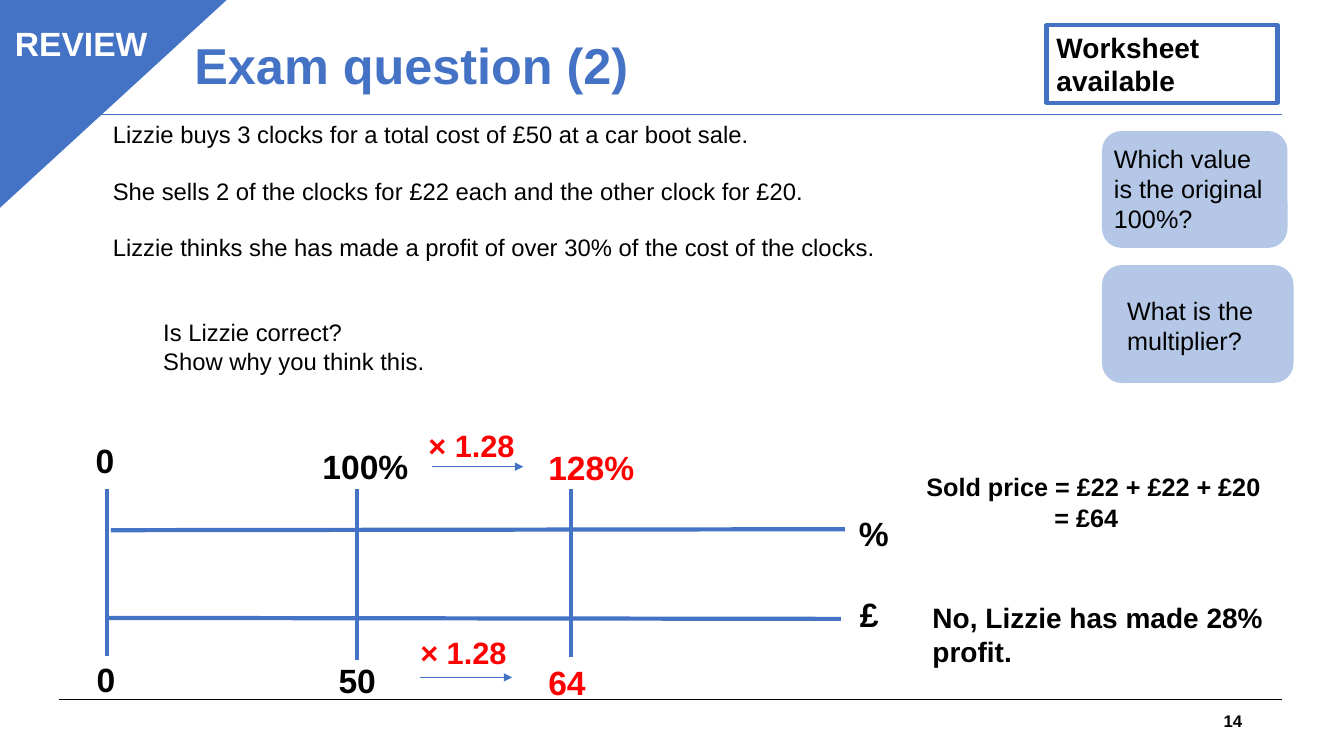
import pptx
import pptx.dml.color
import pptx.enum.shapes
import pptx.enum.text
import pptx.oxml
import pptx.oxml.ns
import pptx.util

EMU_PER_PX = 9144
BLUE, PALE, BLACK, RED, WHITE = "4472C4", "B4C7E7", "000000", "FF0000", "FFFFFF"
SHAPES = pptx.enum.shapes.MSO_SHAPE
ALIGN = pptx.enum.text.PP_ALIGN
ANCHOR = pptx.enum.text.MSO_ANCHOR


def px(length):
    return pptx.util.Emu(length * EMU_PER_PX)


def rgb(value):
    return pptx.dml.color.RGBColor.from_string(value)


def apply(target, values):
    for name, value in values.items():
        setattr(target, name, value)


def append_xml(parent, tag, **attributes):
    element = pptx.oxml.parse_xml(f"<a:{tag} {pptx.oxml.ns.nsdecls('a')}/>")
    for name, value in attributes.items():
        element.set(name, value)
    parent.append(element)


class Board:
    """Draws text, shapes and lines on one slide in a shared style."""

    font = "Arial"

    def __init__(self, slide):
        self.shapes = slide.shapes

    def fill_frame(self, frame, paragraphs, size, color=BLACK, bold=True,
                   align=ALIGN.LEFT, anchor=ANCHOR.TOP, spacing=None):
        apply(frame, {"word_wrap": True, "vertical_anchor": anchor})
        for index, (words, before, indent) in enumerate(paragraphs):
            paragraph = frame.paragraphs[0] if index == 0 else frame.add_paragraph()
            paragraph.text = words
            apply(paragraph, {"alignment": align, "line_spacing": spacing,
                              "space_before": pptx.util.Pt(before)})
            if indent:
                paragraph._p.get_or_add_pPr().set("marL", str(px(indent)))
            apply(paragraph.font, {"name": self.font, "bold": bold,
                                   "size": pptx.util.Pt(size)})
            paragraph.font.color.rgb = rgb(color)

    def text(self, box, words, size, **style):
        paragraphs = [(words, 0, 0)] if isinstance(words, str) else words
        frame = self.shapes.add_textbox(*map(px, box)).text_frame
        self.fill_frame(frame, paragraphs, size, **style)

    def shape(self, kind, box, fill=None, line=None, width=1):
        shape = self.shapes.add_shape(kind, *map(px, box))
        shape.shadow.inherit = False
        if fill:
            shape.fill.solid()
            shape.fill.fore_color.rgb = rgb(fill)
        else:
            shape.fill.background()
        if line:
            shape.line.color.rgb = rgb(line)
            shape.line.width = pptx.util.Pt(width)
        else:
            shape.line.fill.background()
        return shape

    def line(self, start, end, color=BLUE, width=3, arrow=False):
        line = self.shapes.add_connector(
            pptx.enum.shapes.MSO_CONNECTOR.STRAIGHT, *map(px, start + end))
        line.line.color.rgb = rgb(color)
        line.line.width = pptx.util.Pt(width)
        if arrow:
            append_xml(line.line._get_or_add_ln(), "tailEnd", type="triangle")
        append_xml(line._element.spPr, "effectLst")


def draw_header(board):
    for y, color in ((694, BLACK), (114, BLUE)):
        board.line((59, y), (1272, y), color, 0.75)
    board.text((183, 12, 1000, 111), "Exam question (2)", 36, color=BLUE,
               anchor=ANCHOR.MIDDLE, spacing=0.9)
    board.text((942, 695, 300, 40), "14", 12, align=ALIGN.RIGHT,
               anchor=ANCHOR.MIDDLE)
    corner = board.shape(SHAPES.ISOSCELES_TRIANGLE, (-3, -2, 229, 210), BLUE, BLUE)
    corner.adjustments[0] = 0
    corner._element.spPr.xfrm.set("flipV", "1")
    board.text((-2, 18, 165, 50), "REVIEW", 24, color=WHITE, align=ALIGN.CENTER)
    worksheet = board.shape(SHAPES.RECTANGLE, (1038, 25, 229, 77), None, BLUE, 3)
    board.fill_frame(worksheet.text_frame, [("Worksheet\vavailable", 0, 0)], 20)


def draw_hints(board):
    hints = (
        ((1093, 130, 184, 116), (1095, 137, 178, 101), "Which value is the original 100%?"),
        ((1093, 263, 190, 117), (1108, 288, 199, 71), "What is the multiplier?"),
    )
    for card, box, question in hints:
        board.shape(SHAPES.ROUNDED_RECTANGLE, card, PALE)
        board.text(box, question, 18, bold=False)


def draw_number_lines(board):
    board.line((110, 526), (838, 525))
    board.line((106, 613), (834, 614))
    for x, bottom in ((106, 651), (354, 655), (566, 652)):
        board.line((x, bottom), (x, 485))
    labels = (
        (842, 504, "%", BLACK), (843, 584, "£", BLACK),
        (85, 432, "0", BLACK), (86, 649, "0", BLACK),
        (310, 437, "100%", BLACK), (326, 650, "50", BLACK),
        (534, 438, "128%", RED), (534, 652, "64", RED),
    )
    for x, y, value, color in labels:
        board.text((x, y, 113, 50), value, 24, color=color)
    for x, y, arrow_x, arrow_y in ((415, 418, 428, 463), (407, 624, 417, 672)):
        board.text((x, y, 190, 47), "× 1.28", 22, color=RED)
        board.line((arrow_x, arrow_y), (arrow_x + 91, arrow_y), width=0.5, arrow=True)


def draw_problem(board):
    problem = [
        ("Lizzie buys 3 clocks for a total cost of £50 at a car boot sale.", 0, 0),
        ("She sells 2 of the clocks for £22 each and the other clock for £20.", 20, 0),
        ("Lizzie thinks she has made a profit of over 30% of the cost of the clocks.", 20, 0),
        ("Is Lizzie correct?", 40, 50),
        ("Show why you think this.", 0, 50),
    ]
    board.text((102, 114, 905, 268), problem, 17, bold=False)
    working = [("Sold price = £22 + £22 + £20", 0, 0), ("= £64", 0, 127)]
    board.text((909, 463, 370, 71), working, 18)
    board.text((915, 591, 375, 77), "No, Lizzie has made 28% profit.", 20)


def main():
    deck = pptx.Presentation()
    apply(deck, {"slide_width": px(1333), "slide_height": px(750)})
    board = Board(deck.slides.add_slide(deck.slide_layouts[6]))
    draw_header(board)
    draw_hints(board)
    draw_number_lines(board)
    draw_problem(board)
    deck.save("out.pptx")


if __name__ == "__main__":
    main()
